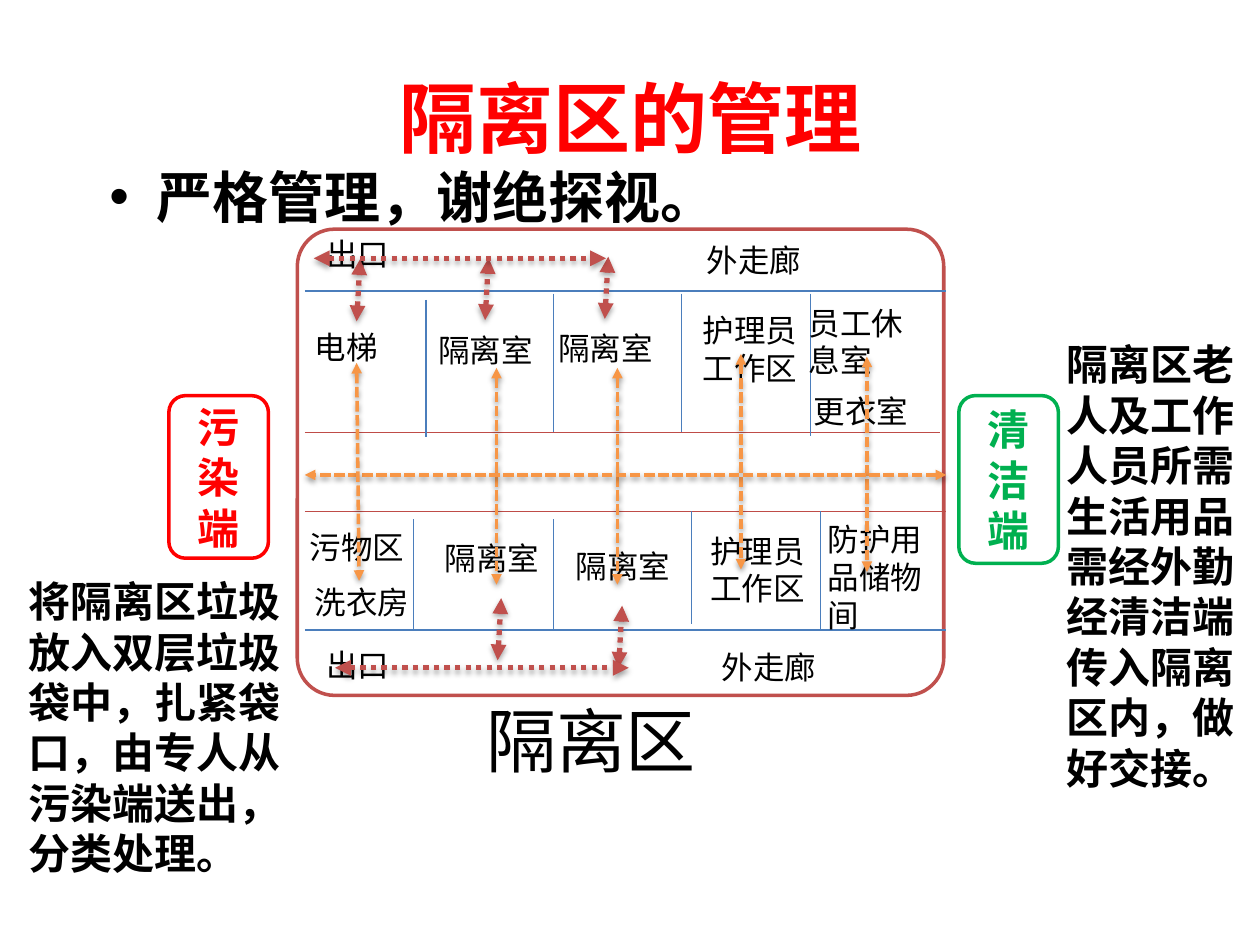
from lxml import etree
from pptx import Presentation
from pptx.dml.color import RGBColor
from pptx.enum.dml import MSO_LINE
from pptx.enum.shapes import MSO_CONNECTOR, MSO_SHAPE
from pptx.enum.text import MSO_ANCHOR, PP_ALIGN
from pptx.oxml.ns import qn
from pptx.util import Pt

STRAIGHT = MSO_CONNECTOR.STRAIGHT
ROUNDED = MSO_SHAPE.ROUNDED_RECTANGLE
DASHED, DOTTED = MSO_LINE.SQUARE_DOT, MSO_LINE.ROUND_DOT
MIDDLE, TOP = MSO_ANCHOR.MIDDLE, MSO_ANCHOR.TOP
CENTER, LEFT = PP_ALIGN.CENTER, PP_ALIGN.LEFT

BLACK = RGBColor(0x00, 0x00, 0x00)
WHITE = RGBColor(0xFF, 0xFF, 0xFF)
RED = RGBColor(0xFF, 0x00, 0x00)
GREEN = RGBColor(0x00, 0xB0, 0x50)
BRICK = RGBColor(0xC0, 0x50, 0x4D)
DARK_BRICK = RGBColor(0xBF, 0x4C, 0x48)
BLUE = RGBColor(0x4B, 0x7E, 0xBC)
ORANGE = RGBColor(0xF7, 0x96, 0x46)

TITLE = "隔离区的管理"
RULE = "严格管理，谢绝探视。"
WARD_NAME = ("隔离区", 270.7, 395.3, 172, 55.4)

WARD_LEFT, WARD_RIGHT = 174.2, 540.7
OUTER_TOP, INNER_TOP, INNER_BOTTOM, OUTER_BOTTOM = 166.3, 247, 292.3, 360
CORRIDOR_WALLS = [
    (INNER_TOP, 537.1, DARK_BRICK),
    (INNER_BOTTOM, WARD_RIGHT, DARK_BRICK),
    (OUTER_TOP, WARD_RIGHT, BLUE),
    (OUTER_BOTTOM, WARD_RIGHT, BLUE),
]
ROOM_WALLS = [
    (243.4, 171.4, 249.8), (316.1, 167.8, INNER_TOP),
    (389.5, 167.8, INNER_TOP), (463, 167.8, 249.1),
    (236.2, 296.6, OUTER_BOTTOM), (316.1, 296.6, OUTER_BOTTOM),
    (395.3, INNER_BOTTOM, 356.4), (468.7, INNER_BOTTOM, OUTER_BOTTOM),
]

LABEL_WIDTH, LINE_HEIGHT, LABEL_PADDING = 73.4, 21.9, 7.2
LABELS = [
    ("出口", 179.3, 131, LABEL_WIDTH, 1),
    ("外走廊", 396.7, 133.9, 85.7, 1),
    ("电梯", 172.8, 183.6, LABEL_WIDTH, 1),
    ("隔离室", 243.4, 185.8, LABEL_WIDTH, 1),
    ("隔离室", 311.8, 184.3, LABEL_WIDTH, 1),
    ("护理员工作区", 394.6, 174.2, LABEL_WIDTH, 2),
    ("员工休息室", 455, 169.9, 84.2, 2),
    ("更衣室", 457.9, 220.3, LABEL_WIDTH, 1),
    ("污物区", 169.9, 298.1, LABEL_WIDTH, 1),
    ("洗衣房", 172.8, 329.8, LABEL_WIDTH, 1),
    ("隔离室", 247, 304.6, LABEL_WIDTH, 1),
    ("隔离室", 321.8, 308.9, LABEL_WIDTH, 1),
    ("护理员工作区", 398.9, 300.2, LABEL_WIDTH, 2),
    ("防护用品储物间", 465.8, 293.8, LABEL_WIDTH, 3),
    ("出口", 179.3, 365.8, LABEL_WIDTH, 1),
    ("外走廊", 405.4, 366.5, LABEL_WIDTH, 1),
]

STAFF_ROUTES = [
    (423.4, 202.3, 423.4, 325.4),
    (352.8, 210.2, 352.8, 334.1),
    (495.4, 203.8, 495.4, 326.9),
    (283.7, 210.2, 283.7, 334.1),
    (WARD_RIGHT, 271.4, WARD_LEFT, 271.4),
    (203.8, 207.4, 205.2, 331.9),
]
EXIT_RISE, EXIT_DRIFT = 35.5, 2
EXIT_DOORS = [(277.2, 182.9), (345.6, 182.2), (284.4, 377.3),
              (353.5, 381.6), (203.8, 183.6)]
EXIT_ROUTES = [(x, y, x + EXIT_DRIFT, y - EXIT_RISE) for x, y in EXIT_DOORS] + [
    (179.3, 147.6, 346.3, 147.6),
    (191.5, 381.6, 359.3, 381.6),
]

ENDS = [
    ("清洁端", 547.9, 226.1, 56.9, 95.8, GREEN),
    ("污染端", 96.5, 226.1, 56.9, 92.9, RED),
]
NOTES = [
    ("隔离区老人及工作人员所需生活用品需经外勤经清洁端传入隔离区内，做好交接。",
     602.6, 190.1, 118.8, 269.3),
    ("将隔离区垃圾放入双层垃圾袋中，扎紧袋口，由专人从污染端送出，分类处理。",
     9.4, 325.4, 160.6, 181.4),
]


def place(left, top, width, height):
    return Pt(left), Pt(top), Pt(width), Pt(height)


def write(shape, text, size, color=BLACK, font="Arial", bold=False,
          align=LEFT, anchor=TOP):
    frame = shape.text_frame
    frame.word_wrap = True
    frame.vertical_anchor = anchor
    paragraph = frame.paragraphs[0]
    paragraph.alignment = align
    run = paragraph.add_run()
    run.text = text
    run.font.size = Pt(size)
    run.font.name = font
    run.font.bold = bold
    run.font.color.rgb = color
    return paragraph


def add_text(shapes, text, box, size, **style):
    return write(shapes.add_textbox(*place(*box)), text, size, **style)


def add_rounded(shapes, box, color):
    rounded = shapes.add_shape(ROUNDED, *place(*box))
    rounded.shadow.inherit = False
    rounded.line.color.rgb = color
    rounded.line.width = Pt(2)
    return rounded


def add_line(shapes, ends, color, width):
    line = shapes.add_connector(STRAIGHT, *place(*ends))
    line.line.color.rgb = color
    line.line.width = Pt(width)
    effects = etree.SubElement(line._element.spPr, qn("a:effectLst"))
    return line, effects


def add_route(shapes, ends, color, width, dash, distance, opacity):
    route, effects = add_line(shapes, ends, color, width)
    route.line.dash_style = dash
    outline = route.line._get_or_add_ln()
    for tag in ("a:headEnd", "a:tailEnd"):
        etree.SubElement(outline, qn(tag), type="triangle")
    shadow = etree.SubElement(effects, qn("a:outerShdw"), blurRad=str(Pt(3.1)),
                              dist=str(Pt(distance)), dir="5400000", rotWithShape="0")
    shade = etree.SubElement(shadow, qn("a:srgbClr"), val=str(BLACK))
    etree.SubElement(shade, qn("a:alpha"), val=str(opacity * 1000))


def add_bullet(paragraph, indent):
    properties = paragraph._p.get_or_add_pPr()
    properties.set("marL", str(Pt(indent)))
    properties.set("indent", str(-Pt(indent)))
    etree.SubElement(properties, qn("a:buFont"), typeface="Arial")
    etree.SubElement(properties, qn("a:buChar"), char="•")


def main():
    deck = Presentation()
    deck.slide_width, deck.slide_height = Pt(720), Pt(540)
    slide = deck.slides.add_slide(deck.slide_layouts[5])

    rule = add_text(slide.shapes, RULE, (55.4, 89.3, 648, 56.2), 32,
                    font="Calibri", bold=True)
    add_bullet(rule, 27)

    title = slide.shapes.title
    title.left, title.top, title.width, title.height = place(101.5, 21.6, 517.7, 90)
    write(title, TITLE, 44, RED, "Calibri", True, CENTER, MIDDLE)

    ward = slide.shapes.add_group_shape().shapes
    outline = add_rounded(ward, (169.9, 131, 369.4, 266.4), BRICK)
    outline.adjustments[0] = 0.08
    outline.fill.solid()
    outline.fill.fore_color.rgb = WHITE
    for y, right, color in CORRIDOR_WALLS:
        add_line(ward, (WARD_LEFT, y, right, y), color, 0.75)
    for x, top, bottom in ROOM_WALLS:
        add_line(ward, (x, top, x, bottom), BLUE, 0.75)
    for text, left, top, width, lines in LABELS:
        height = LABEL_PADDING + lines * LINE_HEIGHT
        add_text(ward, text, (left, top, width, height), 18)
    add_text(ward, WARD_NAME[0], WARD_NAME[1:], 40)
    for ends in STAFF_ROUTES:
        add_route(ward, ends, ORANGE, 2, DASHED, 1.6, 38)
    for ends in EXIT_ROUTES:
        add_route(ward, ends, BRICK, 3, DOTTED, 1.8, 35)

    for text, *box, color in ENDS:
        end = add_rounded(slide.shapes, box, color)
        end.fill.background()
        end.text_frame.margin_top = end.text_frame.margin_bottom = 0
        write(end, text, 24, color, "Calibri", True, CENTER, MIDDLE)
    for text, *box in NOTES:
        add_text(slide.shapes, text, box, 24, bold=True)

    deck.save("out.pptx")


if __name__ == "__main__":
    main()
